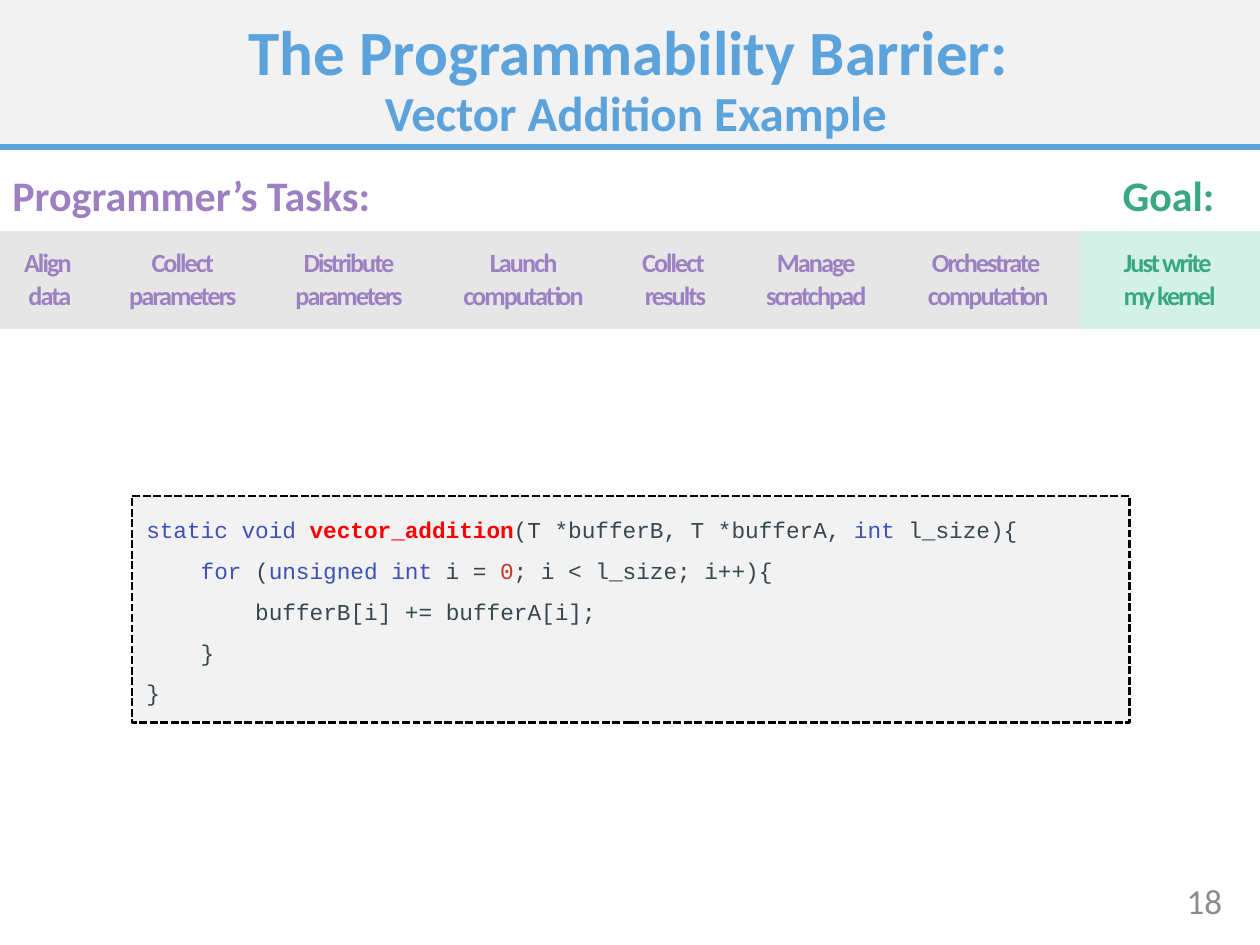
import copy
from dataclasses import dataclass

import pptx
import pptx.dml.color
import pptx.enum.dml
import pptx.enum.shapes
import pptx.enum.text
import pptx.oxml.ns
import pptx.util

Pt = pptx.util.Pt
RGBColor = pptx.dml.color.RGBColor
Align = pptx.enum.text.PP_ALIGN
Anchor = pptx.enum.text.MSO_ANCHOR

BLUE = RGBColor(0x5C, 0xA2, 0xDB)
PURPLE = RGBColor(0x9C, 0x80, 0xC1)
GREEN = RGBColor(0x38, 0xA8, 0x81)
MINT = RGBColor(0xD4, 0xF1, 0xE7)
GRAY = RGBColor(0xE7, 0xE6, 0xE6)
PALE = RGBColor(0xF2, 0xF2, 0xF2)
PAGE = RGBColor(0x8C, 0x8C, 0x8C)
BLACK = RGBColor(0x00, 0x00, 0x00)
KEYWORD = RGBColor(0x3F, 0x51, 0xB5)
CODE = RGBColor(0x37, 0x47, 0x4F)
NUMBER = RGBColor(0xC5, 0x39, 0x29)
RED = RGBColor(0xFF, 0x00, 0x00)

NO_GRID_STYLE = "{2D5ABB26-0587-4C30-8999-92F81FD0307C}"


@dataclass(frozen=True)
class Box:
    left: float
    top: float
    width: float
    height: float

    def lengths(self) -> tuple:
        return Pt(self.left), Pt(self.top), Pt(self.width), Pt(self.height)


@dataclass(frozen=True)
class Span:
    text: str
    color: RGBColor
    size: float
    bold: bool = True
    font: str = "Calibri"
    tracking: float = 0


@dataclass(frozen=True)
class Task:
    text: str
    width: float
    color: RGBColor = PURPLE
    fill: RGBColor = GRAY


def add_span(p, span: Span) -> None:
    for i, part in enumerate(span.text.split("\v")):
        if i:
            p.add_line_break()
            p._p[-1].append(copy.deepcopy(r._r.rPr))
        if not part:
            continue
        r = p.add_run()
        r.text = part
        r.font.name = span.font
        r.font.size = Pt(span.size)
        r.font.bold = span.bold
        r.font.color.rgb = span.color
        if span.tracking:
            r._r.get_or_add_rPr().set("spc", str(round(span.tracking * 100)))


def fill_text(tf, lines: list[list[Span]], align=Align.LEFT, spacing: float = 1.0) -> None:
    for i, line in enumerate(lines):
        p = tf.add_paragraph() if i else tf.paragraphs[0]
        p.alignment = align
        p.line_spacing = spacing
        for span in line:
            add_span(p, span)


def add_text(s, box: Box, lines: list[list[Span]], align=Align.LEFT,
             spacing: float = 1.0, anchor=Anchor.MIDDLE):
    tf = s.shapes.add_textbox(*box.lengths()).text_frame
    tf.word_wrap = True
    tf.vertical_anchor = anchor
    fill_text(tf, lines, align, spacing)
    return tf


def add_panel(s, box: Box):
    sp = s.shapes.add_shape(pptx.enum.shapes.MSO_SHAPE.RECTANGLE, *box.lengths())
    sp.shadow.inherit = False
    sp.fill.solid()
    sp.fill.fore_color.rgb = PALE
    sp.line.fill.background()
    return sp


def add_rule(s, y: float) -> None:
    cxn = s.shapes.add_connector(pptx.enum.shapes.MSO_CONNECTOR.STRAIGHT, 0, Pt(y), Pt(720), Pt(y))
    cxn.line.color.rgb = BLUE
    cxn.line.width = Pt(3)
    pptx.oxml.ns.qn("a:effectLst")
    sppr = cxn._element.spPr
    sppr.append(sppr.makeelement(pptx.oxml.ns.qn("a:effectLst"), {}))


def add_tasks(s, tasks: list[Task], top: float, height: float) -> None:
    box = Box(0, top, sum(t.width for t in tasks), height)
    table = s.shapes.add_table(1, len(tasks), *box.lengths()).table
    table.first_row = False
    table.horz_banding = False
    table._tbl.tblPr.find(pptx.oxml.ns.qn("a:tableStyleId")).text = NO_GRID_STYLE
    for i, task in enumerate(tasks):
        table.columns[i].width = Pt(task.width)
        cell = table.cell(0, i)
        cell.fill.solid()
        cell.fill.fore_color.rgb = task.fill
        cell.vertical_anchor = Anchor.MIDDLE
        lines = [[Span(t, task.color, 15, tracking=-1.1)] for t in task.text.split("\n")]
        fill_text(cell.text_frame, lines, Align.CENTER)


def code(text: str, color: RGBColor = CODE, bold: bool = False) -> Span:
    return Span(text, color, 13, bold, "Courier New")


TASKS = [
    Task("Align \ndata", 57),
    Task("Collect\nparameters", 95),
    Task("Distribute\nparameters", 95),
    Task("Launch\ncomputation", 104.5),
    Task("Collect \nresults", 69),
    Task("Manage\nscratchpad", 92),
    Task("Orchestrate \vcomputation", 104.5),
    Task("Just write \vmy kernel", 103, GREEN, MINT),
]

KERNEL = [
    [code("static void ", KEYWORD), code("vector_addition", RED, True),
     code("(T *bufferB, T *bufferA, "), code("int ", KEYWORD), code("l_size){")],
    [code("    "), code("for", KEYWORD), code(" ("), code("unsigned int ", KEYWORD),
     code("i = "), code("0", NUMBER), code("; i < l_size; i++){")],
    [code("        bufferB[i] += bufferA[i];")],
    [code("    }")],
    [code("}")],
]


def main() -> None:
    prs = pptx.Presentation()
    prs.slide_width, prs.slide_height = Pt(720), Pt(540)
    s = prs.slides.add_slide(prs.slide_layouts[6])

    add_panel(s, Box(0, 0, 720, 84))
    add_text(s, Box(628, 500.5, 77.5, 28.5), [[Span("18", PAGE, 20, False)]], Align.RIGHT)
    add_rule(s, 84)
    title = [Span("The Programmability Barrier: \v", BLUE, 36),
             Span("Vector Addition Example", BLUE, 28)]
    add_text(s, Box(13, 10, 700.5, 73), [title], Align.CENTER, 0.9)

    add_tasks(s, TASKS, 132, 56)
    add_text(s, Box(0, 83.5, 615.5, 56), [[Span("Programmer’s Tasks:", PURPLE, 24)]])
    add_text(s, Box(615.5, 83.5, 104.5, 56), [[Span("Goal:", GREEN, 24)]], Align.CENTER)

    frame = add_panel(s, Box(75.5, 283.5, 570, 129.5))
    frame.line.color.rgb = BLACK
    frame.line.width = Pt(1.5)
    frame.line.dash_style = pptx.enum.dml.MSO_LINE.SQUARE_DOT
    tf = add_text(s, Box(76.5, 279.5, 671, 129.5), KERNEL, spacing=1.5, anchor=Anchor.TOP)
    tf.margin_left = tf.margin_top = tf.margin_right = tf.margin_bottom = Pt(7.2)

    prs.save("out.pptx")


if __name__ == "__main__":
    main()
